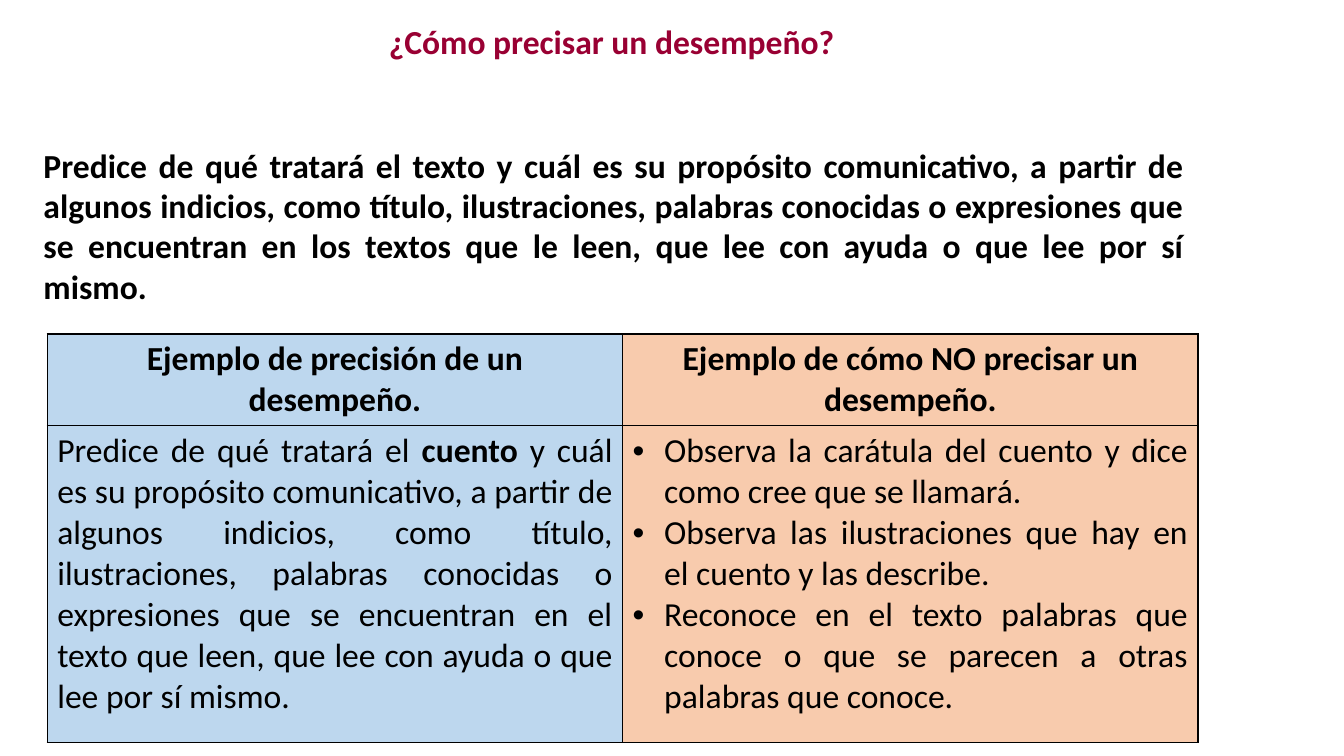
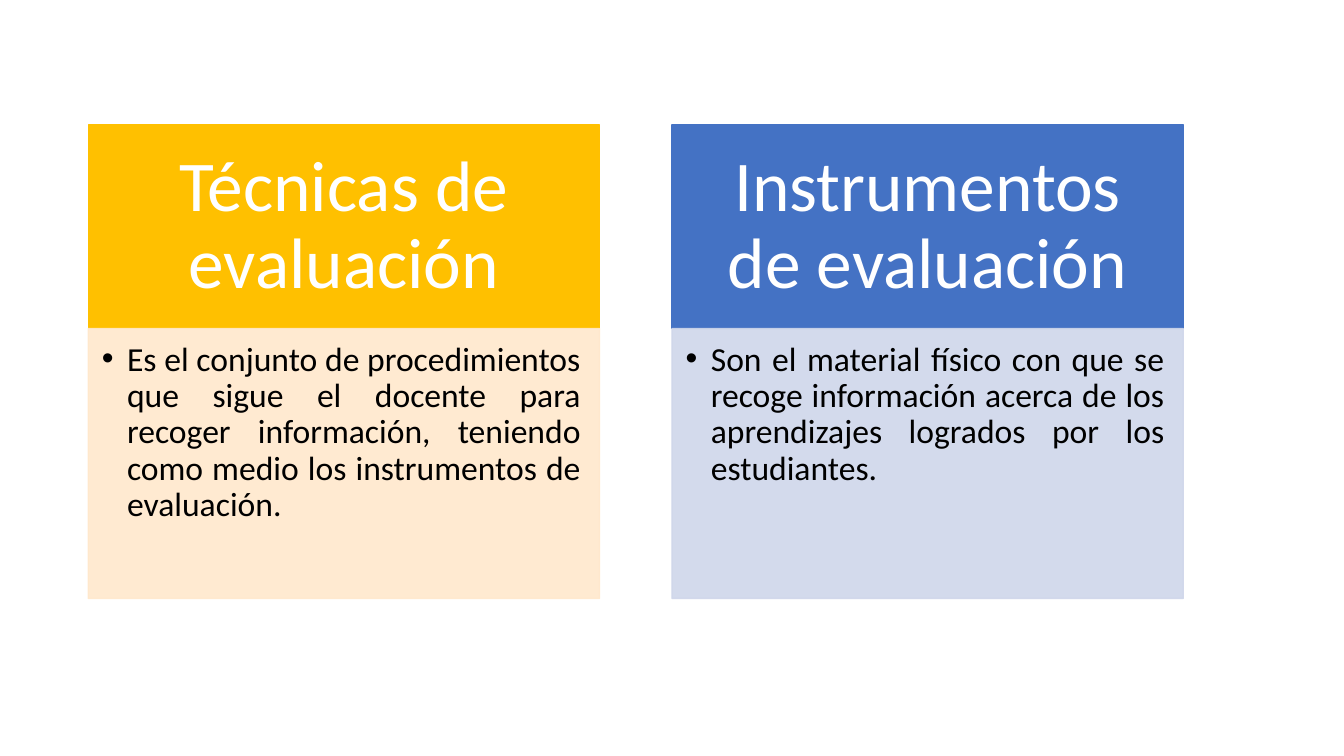
from pptx import Presentation
from pptx.dml.color import RGBColor
from pptx.enum.shapes import MSO_SHAPE as Shape
from pptx.enum.text import MSO_ANCHOR as Anchor, MSO_AUTO_SIZE as AutoSize, PP_ALIGN as Align
from pptx.oxml.ns import qn
from pptx.util import Emu, Pt
from lxml.etree import SubElement

PX = 9525
FONT = "Calibri"
COLORS = {
    "title": "990033", "text": "000000", "light": "FFFFFF",
    "good": "BDD7EE", "bad": "F8CBAD",
}


def px(length):
    return Emu(length * PX)


def color(hex_text):
    return RGBColor.from_string(hex_text)


def box_lengths(box):
    return [px(length) for length in box]


def apply(target, values):
    for name, value in values.items():
        setattr(target, name, value)


def paint(fill, hex_text, alpha=100):
    fill.solid()
    fill.fore_color.rgb = color(hex_text)
    if alpha < 100:
        srgb = fill._xPr.find(qn("a:solidFill")).find(qn("a:srgbClr"))
        SubElement(srgb, qn("a:alpha"), val=str(alpha * 1000))


def add_bullet(paragraph, indent):
    properties = paragraph._p.get_or_add_pPr()
    properties.set("marL", str(px(indent)))
    properties.set("indent", str(-px(indent)))
    SubElement(properties, qn("a:buFont"), typeface="Arial")
    SubElement(properties, qn("a:buChar"), char="•")


def write(frame, paragraphs, align, size=24, ink="text", bold=False, indent=0, spacing=None):
    for index, runs in enumerate(paragraphs):
        paragraph = frame.add_paragraph() if index else frame.paragraphs[0]
        if indent:
            add_bullet(paragraph, indent)
        paragraph.alignment = align
        if spacing:
            paragraph.line_spacing = spacing
        for text, strong in [(runs, bold)] if isinstance(runs, str) else runs:
            run = paragraph.add_run()
            run.text = text
            apply(run.font, {"name": FONT, "size": Pt(size), "bold": strong})
            run.font.color.rgb = color(COLORS[ink])


def add_text(slide, box, text, align, wrap=True, **style):
    frame = slide.shapes.add_textbox(*box_lengths(box)).text_frame
    apply(frame, {"word_wrap": wrap, "auto_size": AutoSize.SHAPE_TO_FIT_TEXT})
    write(frame, [text], align, **style)


def add_borders(cell):
    properties = cell._tc.get_or_add_tcPr()
    for side in ("lnL", "lnR", "lnT", "lnB"):
        line = SubElement(properties, qn(f"a:{side}"), w=str(Pt(1)))
        fill = SubElement(line, qn("a:solidFill"))
        SubElement(fill, qn("a:srgbClr"), val=COLORS["text"])


def add_comparison(slide, box, row_heights, columns):
    table = slide.shapes.add_table(2, len(columns), *box_lengths(box)).table
    apply(table, {"first_row": False, "horz_banding": False})
    for row, height in zip(table.rows, row_heights):
        row.height = px(height)
    for index, (heading, paragraphs, indent, fill) in enumerate(columns):
        table.columns[index].width = px(box[2] // len(columns))
        top, bottom = table.cell(0, index), table.cell(1, index)
        for cell in (top, bottom):
            add_borders(cell)
            paint(cell.fill, COLORS[fill])
        write(top.text_frame, [heading], Align.CENTER, bold=True)
        write(bottom.text_frame, paragraphs, Align.JUSTIFY, indent=indent)


def add_panel(slide, box, fill, alpha, anchor, margins):
    shape = slide.shapes.add_shape(Shape.RECTANGLE, *box_lengths(box))
    shape.shadow.inherit = False
    paint(shape.fill, fill, alpha)
    paint(shape.line.fill, fill, alpha)
    shape.line.width = Pt(1)
    frame = shape.text_frame
    apply(frame, {"word_wrap": True, "vertical_anchor": anchor})
    sides = ("margin_left", "margin_top", "margin_right", "margin_bottom")
    apply(frame, dict(zip(sides, box_lengths(margins))))
    return frame


def add_card(slide, box, heading, definition, head_fill, body_fill):
    left, top, width, height = box
    head_height = 194
    head = add_panel(slide, (left, top, width, head_height), head_fill, 100,
                     Anchor.MIDDLE, (38, 22, 38, 22))
    write(head, [heading], Align.CENTER, size=51, ink="light", spacing=0.9)
    body = add_panel(slide, (left, top + head_height, width, height - head_height), body_fill, 90,
                     Anchor.TOP, (13, 13, 18, 20))
    write(body, [definition], Align.JUSTIFY, indent=24, spacing=0.9)


def build_performance_slide(slide):
    add_text(slide, (359, 15, 447, 48), "¿Cómo precisar un desempeño?", Align.CENTER,
             wrap=False, ink="title", bold=True)
    add_text(slide, (32, 133, 1105, 165),
             "Predice de qué tratará el texto y cuál es su propósito comunicativo, a partir de "
             "algunos indicios, como título, ilustraciones, palabras conocidas o expresiones que "
             "se encuentran en los textos que le leen, que lee con ayuda o que lee por sí mismo.",
             Align.JUSTIFY, bold=True)
    good_example = [
        ("Predice de qué tratará el ", False),
        ("cuento", True),
        (" y cuál es su propósito comunicativo, a partir de algunos indicios, como título, "
         "ilustraciones, palabras conocidas o expresiones que se encuentran en el texto que "
         "leen, que lee con ayuda o que lee por sí mismo.", False),
    ]
    bad_examples = [
        "Observa la carátula del cuento y dice como cree que se llamará.",
        "Observa las ilustraciones que hay en el cuento y las describe.",
        "Reconoce en el texto palabras que conoce o que se parecen a otras palabras que conoce.",
    ]
    add_comparison(slide, (45, 318, 1096, 389), (87, 302), [
        ("Ejemplo de precisión de un desempeño.", [good_example], 0, "good"),
        ("Ejemplo de cómo NO precisar un desempeño.", bad_examples, 30, "bad"),
    ])


def build_evaluation_slide(slide):
    cards = [
        ("Técnicas de evaluación",
         "Es el conjunto de procedimientos que sigue el docente para recoger información, "
         "teniendo como medio los instrumentos de evaluación.", "FFC000", "FFE8CC"),
        ("Instrumentos de evaluación",
         "Son el material físico con que se recoge información acerca de los aprendizajes "
         "logrados por los estudiantes.", "4472C4", "CFD6EA"),
    ]
    width, gap = 487, 69
    for index, card in enumerate(cards):
        add_card(slide, (84 + index * (width + gap), 119, width, 451), *card)


def main():
    presentation = Presentation()
    apply(presentation, {"slide_width": px(1280), "slide_height": px(720)})
    for build in (build_performance_slide, build_evaluation_slide):
        build(presentation.slides.add_slide(presentation.slide_layouts[6]))
    presentation.save("out.pptx")


if __name__ == "__main__":
    main()
